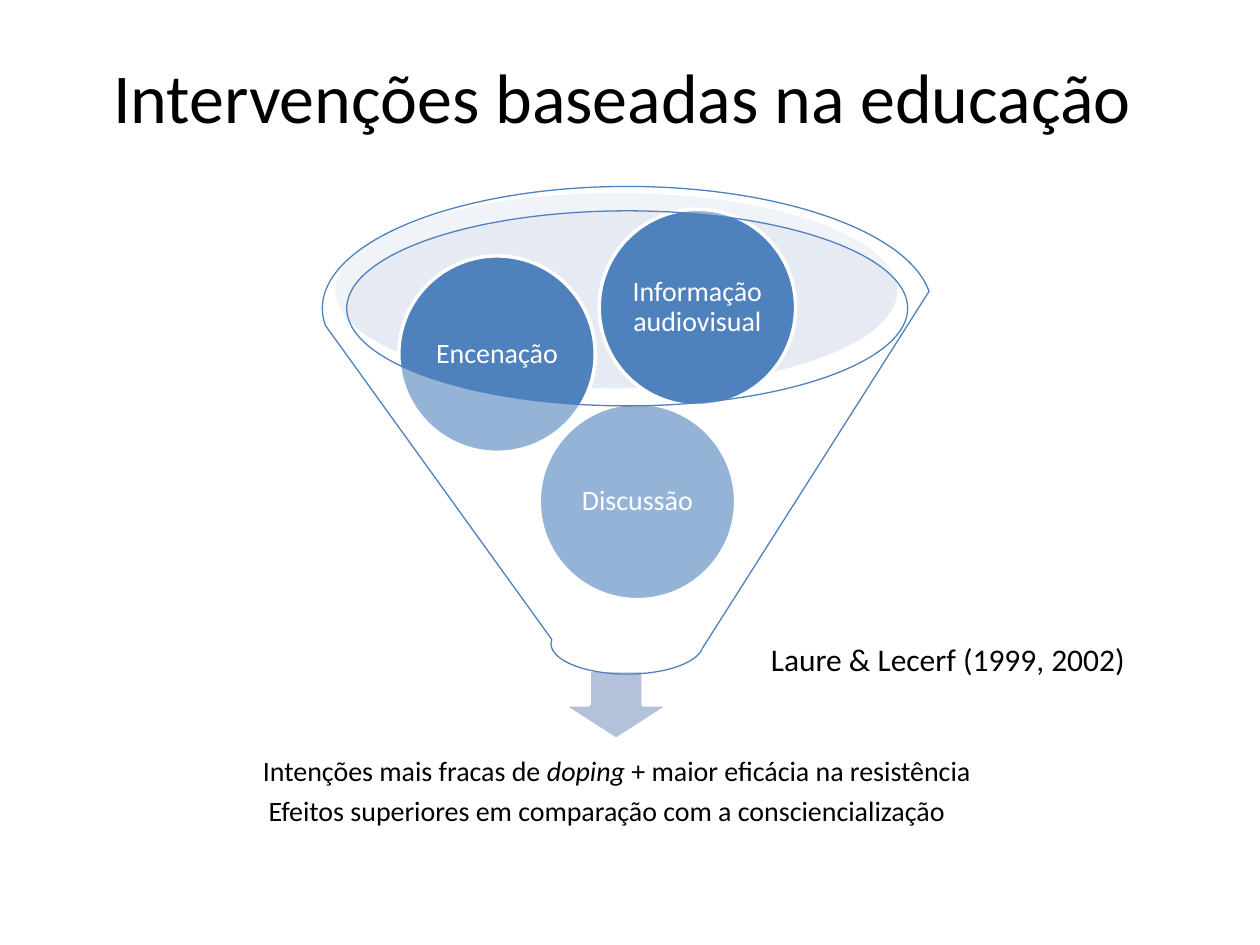
from lxml.etree import SubElement
from pptx import Presentation
from pptx.dml.color import RGBColor
from pptx.enum.shapes import MSO_SHAPE
from pptx.enum.text import MSO_ANCHOR, PP_ALIGN
from pptx.oxml.ns import qn
from pptx.util import Cm, Pt

TITLE = "Intervenções baseadas na educação "
SOURCE = "Laure & Lecerf (1999, 2002)"
RESULT = [
    [("Intenções mais fracas de ", False), ("doping", True),
     (" + maior eficácia na resistência", False)],
    [("Efeitos superiores em comparação com a consciencialização", False)],
]
BALLS = [
    ("Discussão", 10.87, 8.13),
    ("Encenação", 8.04, 5.16),
    ("Informação audiovisual", 12.08, 4.22),
]
SIZE = 3.96
BLUE, WHITE, BLACK = "4F81BD", "FFFFFF", "000000"
LABEL = {"alignment": PP_ALIGN.CENTER, "line_spacing": 0.9, "space_after": Pt(5.6)}


def hue(fmt, code):
    """Give a fill a solid colour."""
    fmt.solid()
    fmt.fore_color.rgb = RGBColor.from_string(code)


def style(item, values):
    """Set every attribute named in a dict."""
    for key, value in values.items():
        setattr(item, key, value)


def shape(kind, box, fill, alpha=None, line=None, width=2):
    """Draw a preset shape and return it."""
    item = slide.shapes.add_shape(kind, *map(Cm, box))
    item.shadow.inherit = False
    hue(item.fill, fill)
    if alpha:
        tone = item.fill._xPr.find(".//" + qn("a:srgbClr"))
        SubElement(tone, qn("a:alpha")).set("val", str(alpha * 1000))
    if line:
        hue(item.line.fill, line)
        item.line.width = Pt(width)
    else:
        item.line.fill.background()
    return item


def frame(item, inset, anchor=MSO_ANCHOR.MIDDLE, wrap=True):
    """Set up a text frame and return it."""
    body = item.text_frame
    style(body, {"word_wrap": wrap, "vertical_anchor": anchor})
    style(body, {"margin_" + side: Cm(inset) for side in ("left", "top", "right", "bottom")})
    return body


def write(para, runs, size, color, form):
    """Fill a paragraph with runs of plain or italic text."""
    style(para, form)
    for text, slant in runs:
        run = para.add_run()
        run.text = text
        style(run.font, {"name": "Calibri", "size": Pt(size), "italic": slant})
        hue(run.font.fill, color)


deck = Presentation()
style(deck, {"slide_width": Cm(25.4), "slide_height": Cm(19.05)})
slide = deck.slides.add_slide(deck.slide_layouts[5])

title = slide.shapes.title
style(title, {"left": Cm(1.27), "top": Cm(0.53), "width": Cm(22.86), "height": Cm(2.79)})
write(frame(title, 0.25).paragraphs[0], [(TITLE, False)], 40, BLACK,
      {"alignment": PP_ALIGN.CENTER})

note = slide.shapes.add_textbox(*map(Cm, (15.29, 12.65, 9.25, 1.02)))
write(frame(note, 0.25, MSO_ANCHOR.TOP, False).paragraphs[0], [(SOURCE, False)], 18, BLACK, {})

shape(MSO_SHAPE.OVAL, (6.76, 3.89, 11.33, 3.94), "C2CDE1", 40)
shape(MSO_SHAPE.DOWN_ARROW, (11.33, 13.51, 2.18, 1.4), "B3C1DB", line=WHITE)

result = slide.shapes.add_textbox(*map(Cm, (2.34, 14.66, 20.19, 2.64)))
body = frame(result, 0.3)
for i, runs in enumerate(RESULT):
    para = body.add_paragraph() if i else body.paragraphs[0]
    write(para, runs, 16, BLACK, LABEL)
para._p.get_or_add_pPr().set("marR", str(Cm(0.4)))

for text, left, top in BALLS:
    ball = shape(MSO_SHAPE.OVAL, (left, top, SIZE, SIZE), BLUE, line=WHITE)
    write(frame(ball, 0.05).paragraphs[0], [(text, False)], 16, WHITE, LABEL)

shape(MSO_SHAPE.FUNNEL, (6.5, 3.76, 12.29, 9.83), WHITE, 40, BLUE, 0.75)

deck.save("out.pptx")
